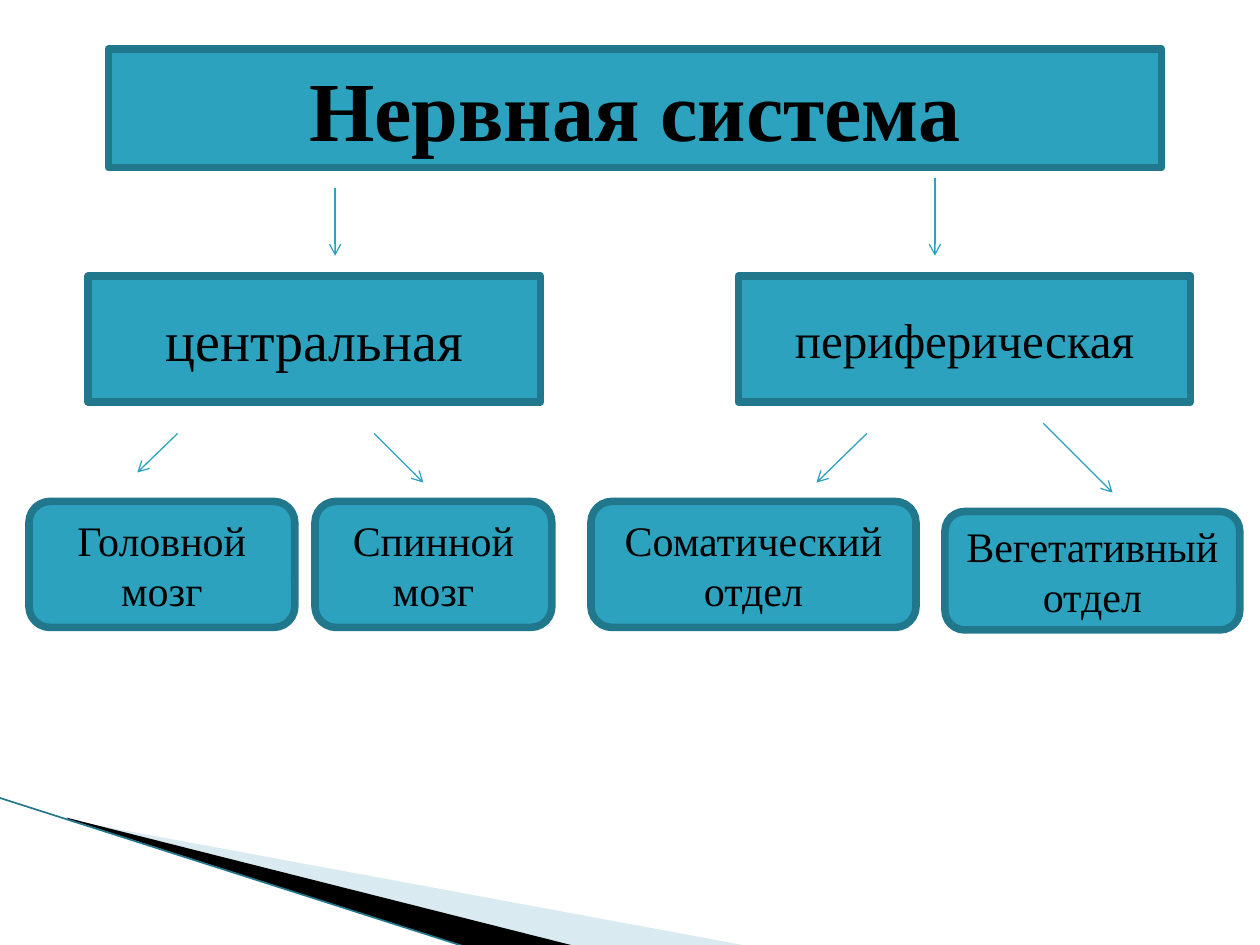
from lxml import etree
from pptx import Presentation
from pptx.dml.color import RGBColor
from pptx.enum import shapes, text
from pptx.oxml import ns
from pptx.util import Inches, Pt

COLORS = {"fill": "2DA2BF", "border": "21788D", "text": "000000",
          "pale": "A0CBDC", "black": "000000", "edge": "21788D"}
FONT = "Times New Roman"
RECT = shapes.MSO_SHAPE.RECTANGLE
ROUNDED = shapes.MSO_SHAPE.ROUNDED_RECTANGLE


def rgb(name):
    return RGBColor.from_string(COLORS[name])


def style_box(sp, label, size, bold=False):
    sp.fill.solid()
    sp.fill.fore_color.rgb = rgb("fill")
    sp.line.color.rgb = rgb("border")
    sp.line.width = Pt(4.33)
    tf = sp.text_frame
    tf.word_wrap = True
    tf.auto_size = text.MSO_AUTO_SIZE.NONE
    tf.vertical_anchor = text.MSO_ANCHOR.MIDDLE
    p = tf.paragraphs[0]
    p.text = label
    p.alignment = text.PP_ALIGN.CENTER
    p.font.name = FONT
    p.font.size = Pt(size)
    p.font.bold = bold
    p.font.color.rgb = rgb("text")


def add_box(s, kind, x, y, w, h, label, size):
    sp = s.shapes.add_shape(kind, Inches(x), Inches(y), Inches(w), Inches(h))
    sp.shadow.inherit = False
    style_box(sp, label, size)


def add_line(s, x1, y1, x2, y2, color, width, arrow=False):
    c = s.shapes.add_connector(shapes.MSO_CONNECTOR.STRAIGHT,
                               Inches(x1), Inches(y1), Inches(x2), Inches(y2))
    c.line.color.rgb = rgb(color)
    c.line.width = Pt(width)
    if arrow:
        etree.SubElement(c.line._get_or_add_ln(), ns.qn("a:tailEnd"), type="arrow")
    etree.SubElement(c._element.spPr, ns.qn("a:effectLst"))


def add_wedge(s, points, color, opacity=100):
    points = [(Inches(x), Inches(y)) for x, y in points]
    fb = s.shapes.build_freeform(*points[0])
    fb.add_line_segments(points[1:], close=True)
    sp = fb.convert_to_shape()
    sp.shadow.inherit = False
    sp.fill.solid()
    sp.fill.fore_color.rgb = rgb(color)
    sp.line.fill.background()
    if opacity < 100:
        clr = sp._element.spPr.find(".//" + ns.qn("a:srgbClr"))
        etree.SubElement(clr, ns.qn("a:alpha"), val=str(opacity * 1000))


def add_corner_decor(s, x, y):
    """Draw the wedges of the lower left corner, starting at x, y."""
    pale = [(0.55, 0.18), (5.95, 1.18), (4.56, 1.18), (0.55, 0.17)]
    black = [(0.53, 0.16), (4.57, 1.18), (3.72, 1.19), (0.54, 0.17)]
    add_wedge(s, [(x + dx, y + dy) for dx, dy in pale], "pale", 40)
    add_wedge(s, [(x + dx, y + dy) for dx, dy in black], "black")
    add_line(s, x - 0.01, y, x + 3.71, y + 1.19, "edge", 0.95)


def add_heading(s, x, y, w, h):
    sp = s.shapes.title
    sp.left, sp.top, sp.width, sp.height = map(Inches, (x, y, w, h))
    style_box(sp, "Нервная система", 48, bold=True)


def add_branch(s, x, y, label, size, arrows, parts):
    """Draw a division at x, y with its arrows and parts, placed relative to it."""
    add_box(s, RECT, x, y, 3.59, 1, label, size)
    for x1, y1, x2, y2 in arrows:
        add_line(s, x + x1, y + y1, x + x2, y + y2, "fill", 0.75, arrow=True)
    for part, dx, dy, w, h in parts:
        add_box(s, ROUNDED, x + dx, y + dy, w, h, part, 24)


def main():
    prs = Presentation()
    prs.slide_width, prs.slide_height = Inches(10), Inches(7.5)
    s = prs.slides.add_slide(prs.slide_layouts[5])
    add_corner_decor(s, 0, 6.33)
    add_heading(s, 0.86, 0.39, 8.36, 0.94)
    add_branch(s, 0.7, 2.19, "центральная", 32,
               arrows=[(1.96, -0.7, 1.96, -0.16),
                       (0.71, 1.25, 0.39, 1.56),
                       (2.27, 1.25, 2.66, 1.64)],
               parts=[("Головной мозг", -0.47, 1.79, 2.11, 1),
                      ("Спинной мозг", 1.8, 1.79, 1.88, 1)])
    add_branch(s, 5.86, 2.19, "периферическая", 28,
               arrows=[(1.56, -0.78, 1.56, -0.16),
                       (1.02, 1.25, 0.62, 1.64),
                       (2.42, 1.17, 2.97, 1.72)],
               parts=[("Соматический отдел", -1.17, 1.79, 2.58, 1),
                      ("Вегетативный отдел", 1.64, 1.87, 2.34, 0.94)])
    prs.save("out.pptx")


if __name__ == "__main__":
    main()
